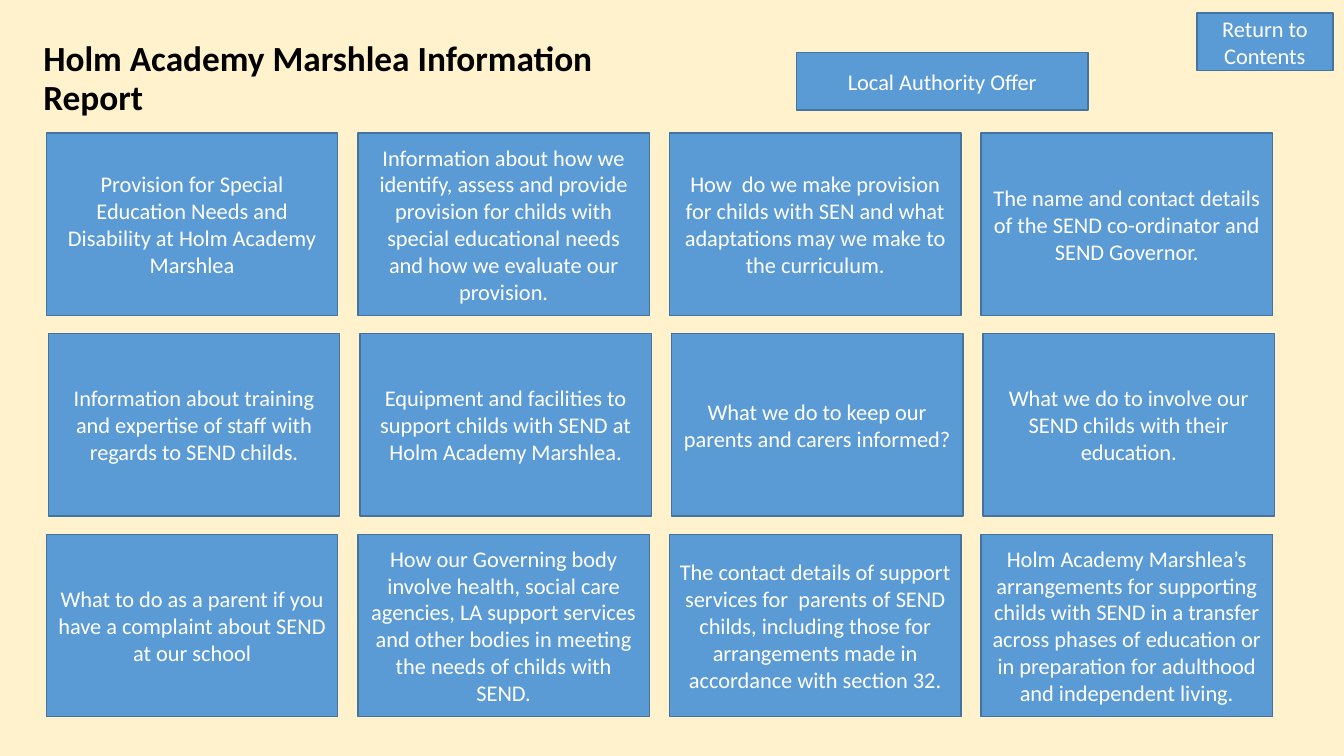
from pptx import Presentation
from pptx import util as u
from pptx.dml.color import RGBColor
from pptx.enum import shapes, text

PX = 9144  # EMU per px, 100 px to the inch
FONT = "Calibri"
COLORS = {"page": "FFF2CC", "box": "5B9BD5", "edge": "43739E",
          "title": "000000", "label": "FFFFFF"}
SCHOOL = "Holm Academy Marshlea"

# Topics by row, each row with its left edge
ROWS = [
    (46, [
        f"Provision for Special Education Needs and Disability at {SCHOOL}",
        "Information about how we identify, assess and provide provision for "
        "childs with special educational needs and how we evaluate our provision.",
        "How  do we make provision for childs with SEN and what adaptations "
        "may we make to the curriculum.",
        "The name and contact details of the SEND co-ordinator and SEND Governor.",
    ]),
    (48, [
        "Information about training and expertise of staff with regards to SEND childs.",
        f"Equipment and facilities to support childs with SEND at {SCHOOL}.",
        "What we do to keep our parents and carers informed?",
        "What we do to involve our SEND childs with their education.",
    ]),
    (46, [
        "What to do as a parent if you have a complaint about SEND at our school",
        "How our Governing body involve health, social care agencies, LA support "
        "services and other bodies in meeting the needs of childs with SEND.",
        "The contact details of support services for  parents of SEND childs, "
        "including those for arrangements made in accordance with section 32.",
        f"{SCHOOL}’s arrangements for supporting childs with SEND in a transfer "
        "across phases of education or in preparation for adulthood and "
        "independent living.",
    ]),
]
TOP, WIDE, HIGH = 132, 289, 181
STEP_X, STEP_Y = 309, 199


def color(name):
    return RGBColor.from_string(COLORS[name])


def style(shape, words, size, ink, align, bold=False):
    """Fill a shape with one vertically centred paragraph."""
    frame = shape.text_frame
    frame.word_wrap = True
    frame.vertical_anchor = text.MSO_ANCHOR.MIDDLE
    para = frame.paragraphs[0]
    para.text = words
    para.alignment = align
    font = para.font
    font.name, font.size, font.bold = FONT, u.Pt(size), bold
    font.color.rgb = color(ink)
    return para


def add_title(slide, words):
    title = slide.shapes.title
    title.left, title.top = 33 * PX, 40 * PX
    title.width, title.height = 649 * PX, 78 * PX
    para = style(title, words, 25.2, "title", text.PP_ALIGN.LEFT, bold=True)
    para.line_spacing = 0.9
    title.text_frame.auto_size = text.MSO_AUTO_SIZE.NONE


def add_box(slide, words, left, top, width, height):
    box = slide.shapes.add_shape(shapes.MSO_SHAPE.RECTANGLE, left * PX,
                                 top * PX, width * PX, height * PX)
    box.shadow.inherit = False
    box.fill.solid()
    box.fill.fore_color.rgb = color("box")
    box.line.color.rgb = color("edge")
    box.line.width = u.Pt(1)
    style(box, words, 16, "label", text.PP_ALIGN.CENTER)


def main():
    deck = Presentation()
    deck.slide_width, deck.slide_height = 1333 * PX, 750 * PX
    slide = deck.slides.add_slide(deck.slide_layouts[5])
    slide.background.fill.solid()
    slide.background.fill.fore_color.rgb = color("page")

    add_title(slide, f"{SCHOOL} Information Report")
    for row, (left, topics) in enumerate(ROWS):
        for col, topic in enumerate(topics):
            add_box(slide, topic, left + col * STEP_X, TOP + row * STEP_Y,
                    WIDE, HIGH)
    add_box(slide, "Local Authority Offer", 790, 52, WIDE, 57)
    add_box(slide, "Return to Contents", 1187, 13, 135, 57)
    deck.save("out.pptx")


if __name__ == "__main__":
    main()
